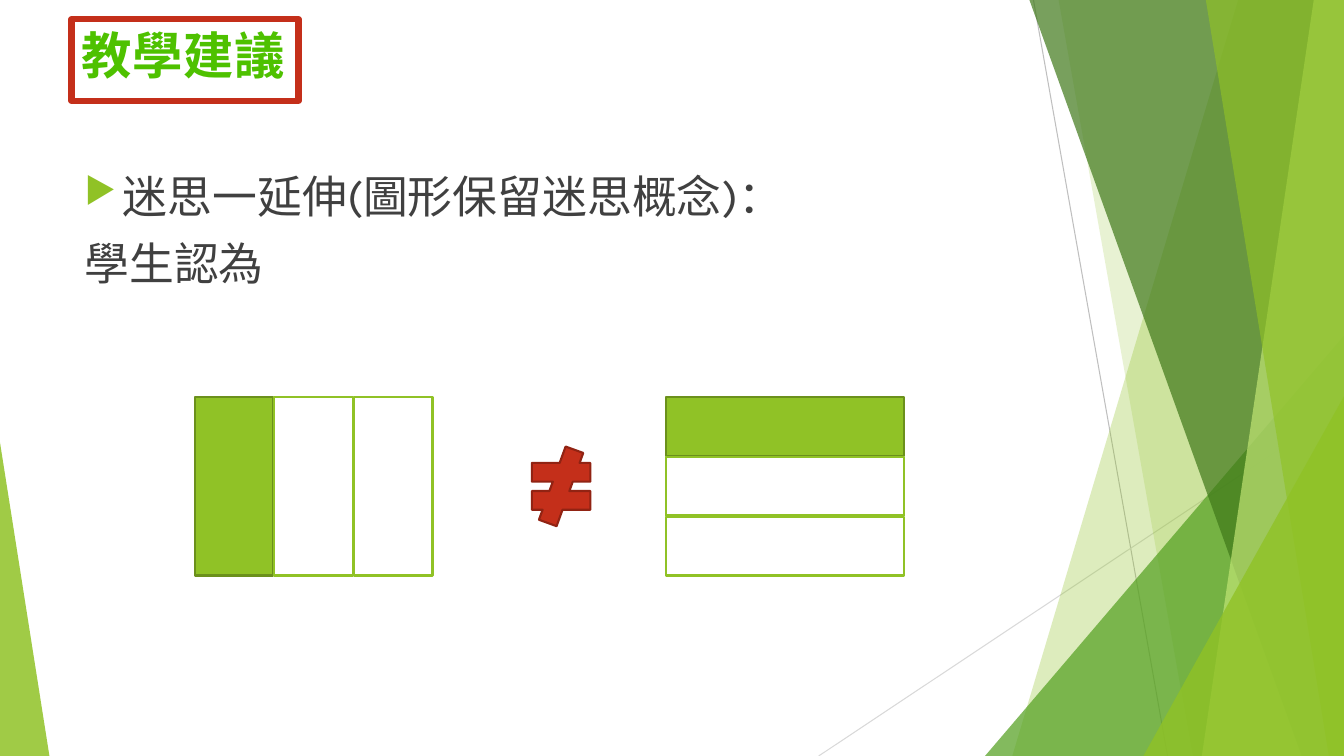
"""Build the teaching suggestion slide about equal thirds of a rectangle."""
import pptx
import pptx.dml.color
import pptx.enum.shapes
import pptx.enum.text
import pptx.oxml
import pptx.oxml.ns
import pptx.util

Inches = pptx.util.Inches
Pt = pptx.util.Pt
SHAPE = pptx.enum.shapes.MSO_SHAPE
COLORS = {
    "white": "FFFFFF", "lime": "90C226", "olive": "6B901C", "green": "54A021",
    "dark": "3F7819", "pale": "C0E474", "red": "C42F1A", "maroon": "912313",
    "text": "404040", "gray": "BFBFBF", "light": "D9D9D9",
    "bright": "4EC100", "deep": "378800",
}
WIDE, HIGH = 13.33, 7.5


def color(name):
    return pptx.dml.color.RGBColor.from_string(COLORS[name])


def child(parent, tag, **attrs):
    node = parent.makeelement(pptx.oxml.ns.qn(tag), attrs)
    parent.append(node)
    return node


def paint(shape, fill, line=None, width=1.5, alpha=100):
    shape.shadow.inherit = False
    shape.fill.solid()
    shape.fill.fore_color.rgb = color(fill)
    if alpha < 100:
        tint = shape.fill._xPr.find(".//" + pptx.oxml.ns.qn("a:srgbClr"))
        child(tint, "a:alpha", val=str(alpha * 1000))
    if line:
        shape.line.color.rgb = color(line)
        shape.line.width = Pt(width)
    else:
        shape.line.fill.background()


def place(shape, box):
    shape.left, shape.top, shape.width, shape.height = map(Inches, box)


def add_shape(shapes, kind, box, fill, line=None, alpha=100):
    shape = shapes.add_shape(kind, *map(Inches, box))
    paint(shape, fill, line, alpha=alpha)
    return shape


def add_ray(shapes, start, end, tone):
    ray = shapes.add_connector(pptx.enum.shapes.MSO_CONNECTOR.STRAIGHT,
                               *map(Inches, start + end))
    ray.line.color.rgb = color(tone)
    ray.line.width = Pt(0.75)
    child(ray._element.spPr, "a:effectLst")


def add_facet(shapes, top, foot, fill, alpha):
    pen = shapes.build_freeform(Inches(top), 0)
    corners = [(WIDE, 0), (WIDE, HIGH), (foot, HIGH)]
    pen.add_line_segments([(Inches(x), Inches(y)) for x, y in corners])
    paint(pen.convert_to_shape(), fill, alpha=alpha)


def add_corner(shapes, box, peak, fill, alpha):
    shape = add_shape(shapes, SHAPE.ISOSCELES_TRIANGLE, box, fill, alpha=alpha)
    shape.adjustments[0] = peak


def add_decor(shapes):
    add_ray(shapes, (10.25, 0), (11.58, HIGH), "gray")
    add_ray(shapes, (WIDE, 4.03), (8.12, HIGH), "light")
    add_facet(shapes, 12.28, 10.04, "lime", 30)
    add_facet(shapes, 10.5, 11.83, "lime", 20)
    add_corner(shapes, (9.77, 3.33, 3.56, 4.17), 1, "green", 72)
    add_facet(shapes, 10.21, 12.91, "dark", 70)
    add_facet(shapes, 13.03, 11.92, "pale", 70)
    add_facet(shapes, 11.96, 13.18, "lime", 65)
    add_corner(shapes, (11.34, 3.93, 1.99, 3.57), 1, "lime", 80)
    add_corner(shapes, (0, 4.39, 0.49, 3.11), 0, "lime", 85)


def set_title(title):
    place(title, (0.71, 0.19, 2.25, 0.81))
    paint(title, "white", "red", 4.5)
    frame = title.text_frame
    frame.text = "教學建議"
    frame.auto_size = pptx.enum.text.MSO_AUTO_SIZE.NONE
    frame.vertical_anchor = pptx.enum.text.MSO_ANCHOR.TOP
    frame.paragraphs[0].alignment = pptx.enum.text.PP_ALIGN.LEFT
    font = frame.paragraphs[0].runs[0].font
    font.name, font.size, font.bold = "Noto Sans Mono", Pt(36), True
    font._element.set("spc", "50")
    font.fill.gradient()
    font.fill.gradient_angle = 270
    marks = [(0.25, "bright"), (1, "deep")]
    for stop, (spot, tone) in zip(font.fill.gradient_stops, marks):
        stop.position = spot
        stop.color.rgb = color(tone)


def add_bullet(para):
    props = para._p.get_or_add_pPr()
    tint = child(props, "a:buClr")
    child(tint, "a:srgbClr", val=COLORS["lime"])
    child(props, "a:buSzPct", val="80000")
    child(props, "a:buChar", char="▶")


def add_body(shapes):
    box = shapes.add_textbox(*map(Inches, (0.74, 1.62, 9.4, 1.4)))
    frame = box.text_frame
    frame.word_wrap = True
    frame.text = "迷思一延伸(圖形保留迷思概念)：\n學生認為"
    for para in frame.paragraphs:
        para.space_before = Pt(10)
        props = para._p.get_or_add_pPr()
        props.set("marL", str(Inches(0.38)))
        props.set("indent", str(Inches(-0.38)))
        font = para.runs[0].font
        font.name, font.size = "Karla", Pt(32)
        font.color.rgb = color("text")
    add_bullet(frame.paragraphs[0])


def add_thirds(shapes, left, top, size, step):
    group = shapes.add_group_shape()
    for i in range(3):
        box = (left + i * step[0], top + i * step[1], *size)
        fill, line = ("white", "lime") if i else ("lime", "olive")
        add_shape(group.shapes, SHAPE.RECTANGLE, box, fill, line)


def main():
    deck = pptx.Presentation()
    deck.slide_width, deck.slide_height = Inches(WIDE), Inches(HIGH)
    slide = deck.slides.add_slide(deck.slide_layouts[5])
    shapes = slide.shapes
    add_decor(shapes)
    set_title(shapes.title)
    add_body(shapes)
    add_thirds(shapes, 1.93, 3.94, (0.78, 1.77), (0.79, 0))
    add_thirds(shapes, 6.61, 3.94, (2.36, 0.58), (0, 0.595))
    add_shape(shapes, SHAPE.MATH_NOT_EQUAL, (5.17, 4.43, 0.79, 0.79),
              "red", "maroon")
    deck.save("out.pptx")


if __name__ == "__main__":
    main()
